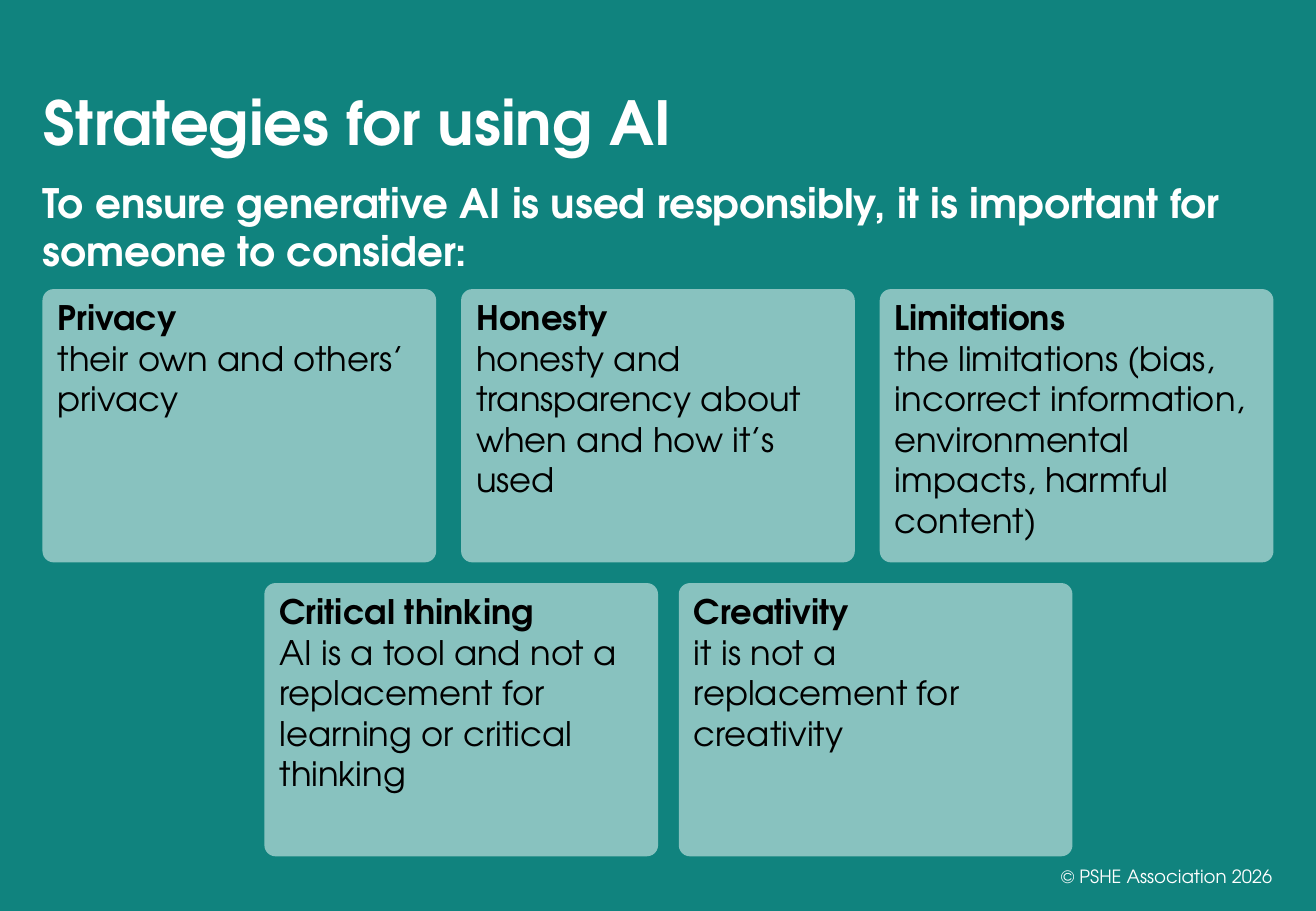
from dataclasses import dataclass

from pptx import Presentation
from pptx import util as u
from pptx.dml.color import RGBColor
from pptx.enum import shapes, text

TEAL = RGBColor(0x10, 0x83, 0x7E)
PALE_TEAL = RGBColor(0x88, 0xC2, 0xBF)
WHITE = RGBColor(0xFF, 0xFF, 0xFF)
BLACK = RGBColor(0x00, 0x00, 0x00)
FONT = "TeX Gyre Adventor"

# Card grid, in inches
GRID_LEFT, GRID_TOP = 0.35, 2.38
COL_PITCH, ROW_PITCH = 3.445, 2.42
CARD_W, CARD_H = 3.24, 2.25


@dataclass(frozen=True)
class Card:
    col: float
    row: int
    heading: str
    body: str


CARDS = [
    Card(0, 0, "Privacy", "their own and others’ privacy"),
    Card(1, 0, "Honesty", "honesty and transparency about when and how it’s used"),
    Card(2, 0, "Limitations", "the limitations (bias, incorrect information, "
         "environmental impacts, harmful content)"),
    Card(0.53, 1, "Critical thinking",
         "AI is a tool and not a replacement for learning or critical thinking"),
    Card(1.52, 1, "Creativity", "it is not a replacement for creativity"),
]


def write(p, words: str, *, size: float, color: RGBColor, bold: bool = False,
          align=text.PP_ALIGN.LEFT, line: float | None = None) -> None:
    """Fill a paragraph with one run; line is its exact line spacing in points."""
    p.alignment = align
    if line:
        p.line_spacing = u.Pt(line)
    r = p.add_run()
    r.text = words
    r.font.name, r.font.size, r.font.bold = FONT, u.Pt(size), bold
    r.font.color.rgb = color


def place(sp, left: float, top: float, width: float, height: float,
          anchor=text.MSO_ANCHOR.TOP):
    """Position a shape in inches and return its wrapped text frame."""
    sp.left, sp.top = u.Inches(left), u.Inches(top)
    sp.width, sp.height = u.Inches(width), u.Inches(height)
    tf = sp.text_frame
    tf.word_wrap = True
    tf.auto_size = text.MSO_AUTO_SIZE.NONE
    tf.vertical_anchor = anchor
    return tf


def add_card(s, card: Card) -> None:
    sp = s.shapes.add_shape(shapes.MSO_SHAPE.ROUNDED_RECTANGLE, 0, 0, 0, 0)
    sp.adjustments[0] = 0.041
    sp.shadow.inherit = False
    sp.fill.solid()
    sp.fill.fore_color.rgb = PALE_TEAL
    sp.line.fill.background()
    tf = place(sp, GRID_LEFT + card.col * COL_PITCH,
               GRID_TOP + card.row * ROW_PITCH, CARD_W, CARD_H)
    tf.margin_left = tf.margin_right = u.Inches(0.1)
    tf.margin_top, tf.margin_bottom = u.Inches(0.04), u.Inches(0.05)
    write(tf.paragraphs[0], card.heading, size=20, color=BLACK, bold=True)
    write(tf.add_paragraph(), card.body, size=20, color=BLACK)


def main() -> None:
    prs = Presentation()
    prs.slide_width, prs.slide_height = u.Inches(10.83), u.Inches(7.5)
    s = prs.slides.add_slide(prs.slide_layouts[5])
    s.background.fill.solid()
    s.background.fill.fore_color.rgb = TEAL

    tf = place(s.shapes.title, 0.26, 0.59, 7.24, 0.76, text.MSO_ANCHOR.BOTTOM)
    write(tf.paragraphs[0], "Strategies for using AI", size=36, color=WHITE,
          bold=True, line=43)

    tf = place(s.shapes.add_textbox(0, 0, 0, 0), 8.13, 7.01, 2.44, 0.4,
               text.MSO_ANCHOR.MIDDLE)
    write(tf.paragraphs[0], "© PSHE Association 2026", size=10.8, color=WHITE,
          align=text.PP_ALIGN.RIGHT)

    tf = place(s.shapes.add_textbox(0, 0, 0, 0), 0.25, 1.43, 10.22, 1)
    write(tf.paragraphs[0], "To ensure generative AI is used responsibly, "
          "it is important for someone to consider:", size=24, color=WHITE,
          bold=True, line=28)

    for card in CARDS:
        add_card(s, card)

    prs.save("out.pptx")


if __name__ == "__main__":
    main()
